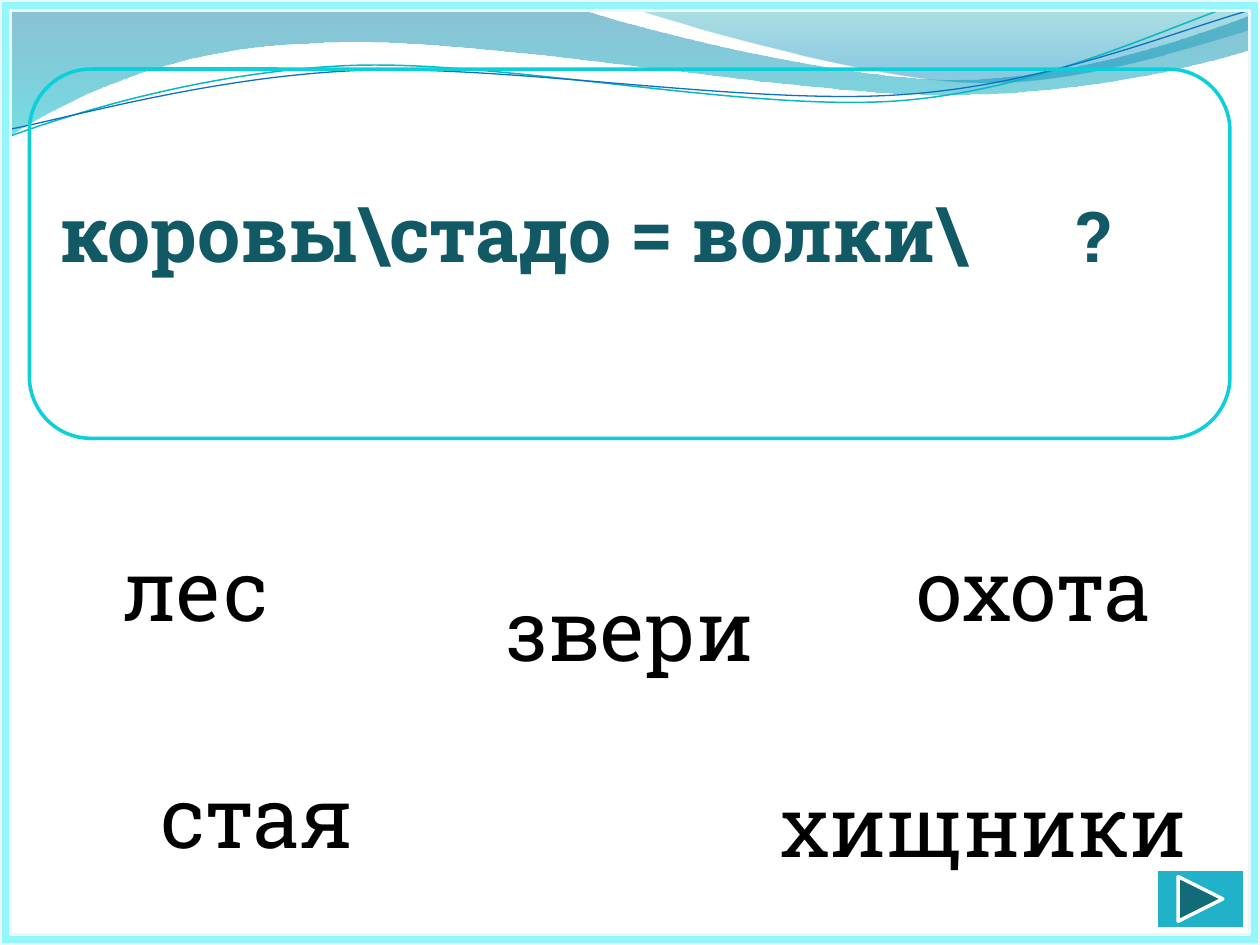
from dataclasses import dataclass
from math import cos, radians, sin

from lxml import etree
from pptx import Presentation
from pptx.dml.color import RGBColor
from pptx.enum.shapes import MSO_SHAPE as Preset
from pptx.enum.text import MSO_ANCHOR as Anchor, PP_ALIGN as Align
from pptx.oxml.ns import qn
from pptx.util import Pt


@dataclass(frozen=True)
class Theme:
    font: str = "Roboto Slab"
    word_size: float = 48
    puzzle_size: float = 44
    mark_size: float = 40
    word: str = "000000"
    puzzle: str = "115964"
    outline: str = "0BD0D9"
    button: str = "21B2C9"
    white: str = "FFFFFF"
    frame: str = "94F5FA"
    frame_edge: str = "E9F9FB"
    teal_line: str = "0AB8BF"
    blue_line: str = "0F6FC6"
    # gradient stops: position, colour, opacity in percent
    deep_wave: tuple = ((0, "0074A1", 45), (1, "00C6CF", 55))
    light_wave: tuple = ((0, "00A1A9", 30), (0.8, "008BBF", 45))


THEME = Theme()
SLIDE_BOX = (0, 0, 720, 540)
STRAND_TILT = -2.7
STRAND_PIVOT = (359.3, 42)

# Wave outlines in points: a pair is a corner, six numbers are a Bezier curve.
DEEP_WAVE = [
    (0, 0), (316.8, -0.72),
    (342.72, 12.24, 478.08, 45.36, 545.76, 45.36),
    (614.16, 45.36, 689.76, 18.72, 720, 6.48), (720.72, 25.92),
    (707.76, 31.68, 626.4, 54.72, 537.12, 54),
    (447.84, 54, 275.04, 20.16, 185.04, 24.48),
    (92.88, 25.92, 33.12, 59.76, -0.72, 81.36), (0, 0),
]
LIGHT_WAVE = [
    (344.88, -0.72),
    (366.48, 7.92, 491.04, 44.64, 553.68, 46.8),
    (616.32, 49.68, 691.92, 23.04, 720, 15.12), (720, 0), (344.88, -0.72),
]
TEAL_STRAND = [
    (0, 79.92),
    (34.56, 66.96, 113.76, 41.04, 199.44, 37.44),
    (284.4, 33.84, 426.96, 64.08, 513.36, 57.6),
    (599.76, 51.12, 675.36, 10.8, 718.56, -1.44),
]
BLUE_STRAND = [
    (0, 74.88),
    (33.84, 69.12, 118.08, 43.92, 203.76, 40.32),
    (290.16, 36.72, 429.84, 60.48, 516.24, 54),
    (601.92, 48.24, 677.52, 15.12, 720, 4.32),
]


def rgb(value):
    return RGBColor.from_string(value)


def level(point):
    """Undo the tilt of a strand, which its rotation puts back."""
    angle = radians(-STRAND_TILT)
    dx, dy = (value - pivot for value, pivot in zip(point, STRAND_PIVOT))
    return (STRAND_PIVOT[0] + dx * cos(angle) - dy * sin(angle),
            STRAND_PIVOT[1] + dx * sin(angle) + dy * cos(angle))


def add_outline(slide, box, outline, close=False, tilt=0):
    """Draw a polygon through all points, then turn its threes into curves."""
    points = [part[i:i + 2] for part in outline for i in range(0, len(part), 2)]
    if tilt:
        points = [level(point) for point in points]
    points = [(Pt(box[0] + x), Pt(box[1] + y)) for x, y in points]
    builder = slide.shapes.build_freeform(*points[0], scale=1.0)
    builder.add_line_segments(points[1:], close=close)
    shape = builder.convert_to_shape()
    shape.shadow.inherit = False
    shape.rotation = tilt
    lines = iter(list(shape._element.iter(qn("a:lnTo"))))
    for part in outline[1:]:
        first = next(lines)
        if len(part) == 6:
            first.tag = qn("a:cubicBezTo")
            for _ in range(2):
                control = next(lines)
                first.append(control[0])
                control.getparent().remove(control)
    return shape


def add_wave(slide, box, outline, stops):
    wave = add_outline(slide, box, outline, close=True)
    wave.line.fill.background()
    wave.fill.gradient()
    wave.fill.gradient_angle = 270
    for stop, (position, color, _) in zip(wave.fill.gradient_stops, stops):
        stop.position = position
        stop.color.rgb = rgb(color)
    for node, (_, _, opacity) in zip(wave._element.spPr.iter(qn("a:srgbClr")), stops):
        etree.SubElement(node, qn("a:alpha")).set("val", str(opacity * 1000))


def add_strand(slide, box, outline, color, width):
    strand = add_outline(slide, box, outline, tilt=STRAND_TILT)
    strand.fill.background()
    strand.line.color.rgb = rgb(color)
    strand.line.width = Pt(width)


def add_waves(slide, box):
    add_wave(slide, box, DEEP_WAVE, THEME.deep_wave)
    add_wave(slide, box, LIGHT_WAVE, THEME.light_wave)
    add_strand(slide, box, TEAL_STRAND, THEME.teal_line, 0.85)
    add_strand(slide, box, BLUE_STRAND, THEME.blue_line, 0.75)


def add_preset(slide, box, preset, fill, line):
    shape = slide.shapes.add_shape(preset, *map(Pt, box))
    shape.shadow.inherit = False
    if fill:
        shape.fill.solid()
        shape.fill.fore_color.rgb = rgb(fill)
    else:
        shape.fill.background()
    shape.line.color.rgb = rgb(line)
    shape.line.width = Pt(2)
    return shape


def write(frame, text, size, color, bold=False, align=Align.LEFT, anchor=Anchor.TOP):
    frame.word_wrap = True
    frame.vertical_anchor = anchor
    paragraph = frame.paragraphs[0]
    paragraph.alignment = align
    run = paragraph.add_run()
    run.text = text
    run.font.name = THEME.font
    run.font.size = Pt(size)
    run.font.bold = bold
    run.font.color.rgb = rgb(color)


def add_puzzle(slide, box):
    left, top = box[:2]
    card = add_preset(slide, box, Preset.ROUNDED_RECTANGLE, None, THEME.outline)
    write(card.text_frame, "коровы\\стадо = волки\\", THEME.puzzle_size, THEME.puzzle, bold=True)
    card.text_frame.margin_top = Pt(56.3)
    mark = slide.shapes.add_textbox(Pt(left + 591), Pt(top + 67), Pt(34), Pt(56))
    write(mark.text_frame, "?", THEME.mark_size, THEME.puzzle, bold=True)


def add_answers(slide, box):
    left, top = box[:2]
    answers = [
        ("звери\u00a0", 203, 22.5, 236, 65.5, Align.CENTER, Anchor.MIDDLE),
        ("лес\u00a0", 0, 0, 146, 65.5, Align.CENTER, Anchor.TOP),
        ("охота", 461.5, 0, 168.5, 87, Align.CENTER, Anchor.TOP),
        ("стая\u00a0", 39.5, 129.8, 196.5, 65.5, Align.LEFT, Anchor.TOP),
        ("хищники", 394, 134.8, 258.5, 65.5, Align.LEFT, Anchor.TOP),
    ]
    for text, x, y, width, height, align, anchor in answers:
        answer = slide.shapes.add_textbox(Pt(left + x), Pt(top + y), Pt(width), Pt(height))
        write(answer.text_frame, text, THEME.word_size, THEME.word, align=align, anchor=anchor)


def add_frame(slide, box):
    frame = add_preset(slide, box, Preset.FRAME, THEME.frame, THEME.frame_edge)
    frame.adjustments[0] = 0.011


def main():
    deck = Presentation()
    deck.slide_width, deck.slide_height = Pt(SLIDE_BOX[2]), Pt(SLIDE_BOX[3])
    slide = deck.slides.add_slide(deck.slide_layouts[6])
    add_waves(slide, SLIDE_BOX)
    add_puzzle(slide, (16.8, 39.5, 686, 211))
    add_answers(slide, (44.9, 303.6, 652.5, 200))
    add_preset(slide, (660.5, 496.7, 51, 34), Preset.ACTION_BUTTON_FORWARD_OR_NEXT,
               THEME.button, THEME.white)
    add_frame(slide, SLIDE_BOX)
    deck.save("out.pptx")


if __name__ == "__main__":
    main()
